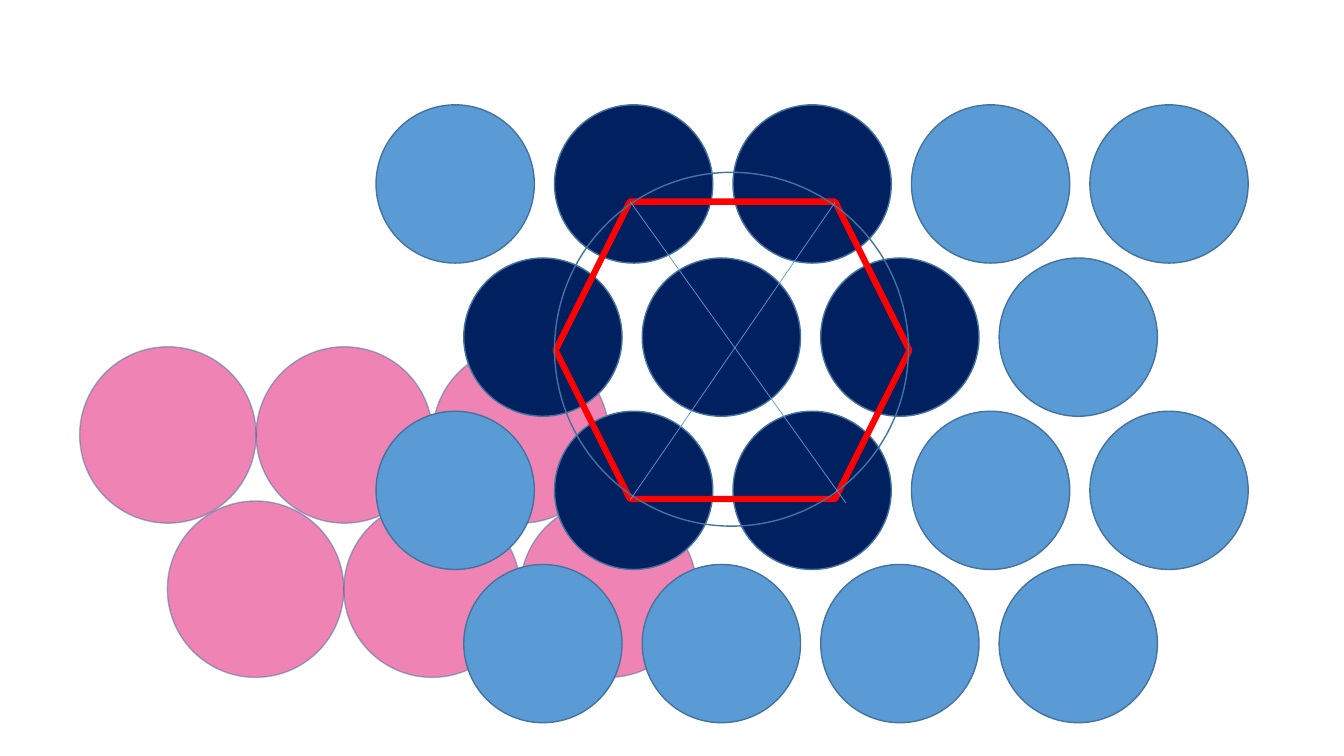
from dataclasses import dataclass

from lxml.etree import SubElement
from pptx import Presentation
from pptx.dml.color import RGBColor
from pptx.enum.shapes import MSO_CONNECTOR, MSO_SHAPE
from pptx.oxml.ns import qn
from pptx.util import Inches, Pt


@dataclass(frozen=True)
class Theme:
    pink: str = "E00A6B"
    pink_outline: str = "41719C"
    blue: str = "5B9BD5"
    navy: str = "002060"
    outline: str = "43739E"
    red: str = "FF0000"
    hairline: float = 0.5
    thin: float = 1
    thick: float = 4.5


class SlideBuilder:
    def __init__(self, slide, theme):
        self.slide = slide
        self.theme = theme

    def shape(self, kind, left, top, width, height, line, weight, fill=None, opacity=100):
        shape = self.slide.shapes.add_shape(
            kind, Inches(left), Inches(top), Inches(width), Inches(height)
        )
        shape.shadow.inherit = False
        if fill:
            shape.fill.solid()
            shape.fill.fore_color.rgb = RGBColor.from_string(fill)
        else:
            shape.fill.background()
        shape.line.color.rgb = RGBColor.from_string(line)
        shape.line.width = Pt(weight)
        if opacity < 100:
            for color in shape._element.spPr.iter(qn("a:srgbClr")):
                SubElement(color, qn("a:alpha")).set("val", str(opacity * 1000))

    def circle(self, left, top, diameter, line, fill=None, opacity=100):
        self.shape(MSO_SHAPE.OVAL, left, top, diameter, diameter,
                   line, self.theme.thin, fill, opacity)

    def hexagon(self, left, top, width, height):
        self.shape(MSO_SHAPE.HEXAGON, left, top, width, height,
                   self.theme.red, self.theme.thick)

    def diagonal(self, start, end):
        connector = self.slide.shapes.add_connector(
            MSO_CONNECTOR.STRAIGHT, *(Inches(value) for value in (*start, *end))
        )
        connector.line.color.rgb = RGBColor.from_string(self.theme.blue)
        connector.line.width = Pt(self.theme.hairline)
        SubElement(connector._element.spPr, qn("a:effectLst"))

    def lattice(self, rows, fills, left, top, pitch, row_pitch, stagger, diameter, line, opacity=100):
        for row_index, row in enumerate(rows):
            row_left = left + stagger * (row_index % 2)
            for column, key in enumerate(row):
                self.circle(row_left + column * pitch, top + row_index * row_pitch,
                            diameter, line, fills[key], opacity)


def main():
    presentation = Presentation()
    presentation.slide_width = Inches(13.33)
    presentation.slide_height = Inches(7.5)
    slide = presentation.slides.add_slide(presentation.slide_layouts[6])
    theme = Theme()
    builder = SlideBuilder(slide, theme)

    fills = {"P": theme.pink, "B": theme.blue, "N": theme.navy}
    builder.lattice(["PPP", "PPP"], fills, left=0.79, top=3.44, pitch=1.75,
                    row_pitch=1.53, stagger=0.87, diameter=1.75,
                    line=theme.pink_outline, opacity=50)
    builder.lattice(["BNNBB", "NNNB", "BNNBB", "BBBB"], fills, left=3.73, top=1.04,
                    pitch=1.77, row_pitch=1.52, stagger=0.87, diameter=1.57,
                    line=theme.outline)

    builder.hexagon(5.51, 2, 3.51, 2.95)
    builder.circle(5.5, 1.71, 3.51, theme.outline)
    builder.diagonal((8.28, 2.01), (6.25, 4.96))
    builder.diagonal((6.25, 2), (8.39, 4.99))

    presentation.save("out.pptx")


if __name__ == "__main__":
    main()
